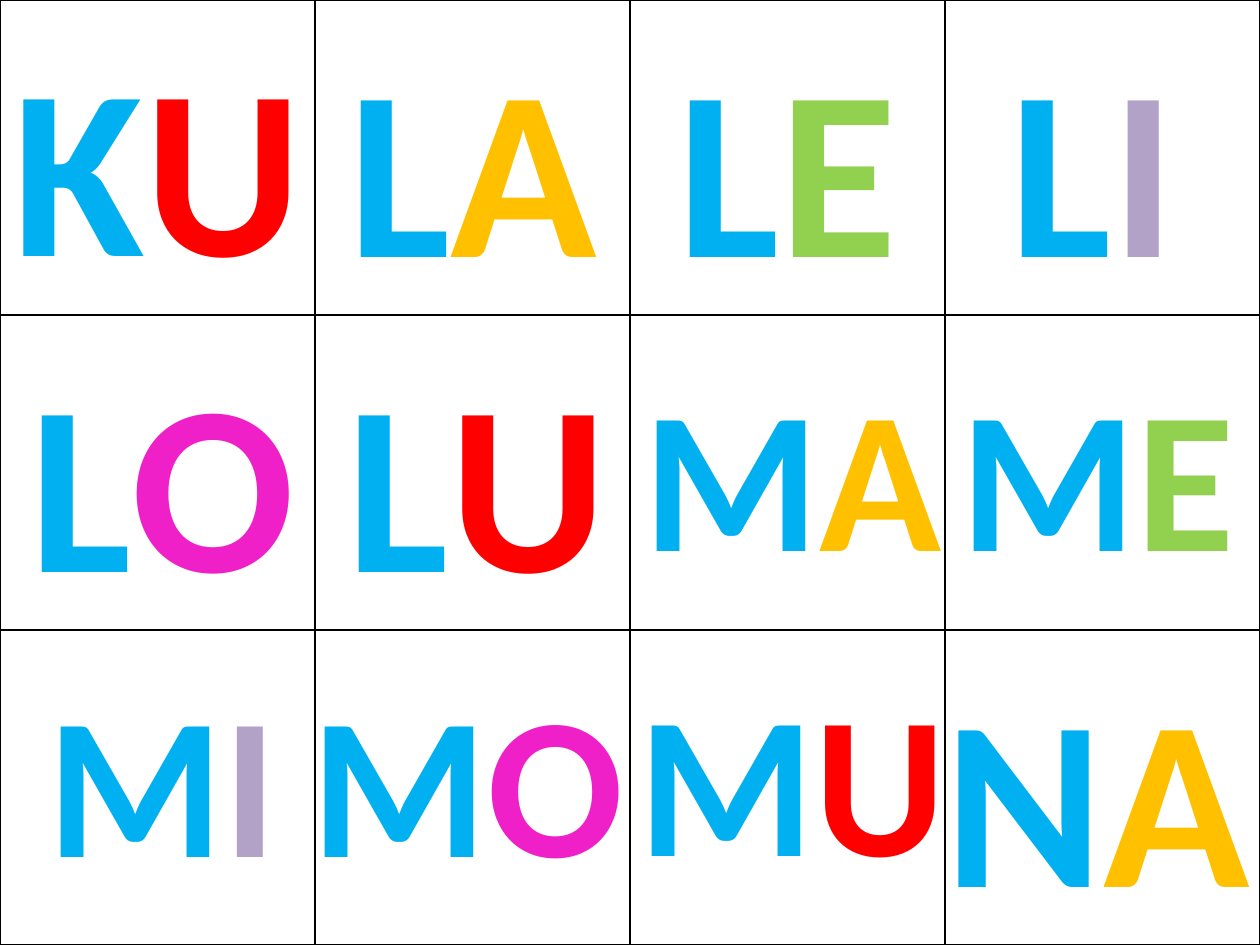
"""Build a sheet of twelve syllable cards with coloured vowels."""
from lxml.etree import SubElement
from pptx import Presentation
from pptx.dml.color import RGBColor
from pptx.enum.text import MSO_AUTO_SIZE, PP_ALIGN
from pptx.oxml import parse_xml
from pptx.oxml.ns import nsdecls, qn
from pptx.util import Inches, Pt


def paint(fill, color):
    fill.solid()
    fill.fore_color.rgb = RGBColor.from_string(color)


def line(tag, color):
    return parse_xml(
        f'<a:{tag} {nsdecls("a")} w="12700"><a:solidFill>'
        f'<a:srgbClr val="{color}"/></a:solidFill></a:{tag}>')


deck = Presentation()
deck.slide_width, deck.slide_height = Inches(10), Inches(7.5)
slide = deck.slides.add_slide(deck.slide_layouts[6])

grid = slide.shapes.add_table(3, 4, 0, 0, Inches(10), Inches(7.5)).table
grid.first_row = grid.horz_banding = False
for cell in grid.iter_cells():
    paint(cell.fill, "FFFFFF")
    props = cell._tc.get_or_add_tcPr()
    for spot, tag in enumerate(("lnL", "lnR", "lnT", "lnB")):
        props.insert(spot, line(tag, "000000"))

blue = "00B0F0"
vowels = {"A": "FFC000", "E": "92D050", "I": "B3A2C7",
          "O": "F020C8", "U": "FF0000"}
sizes = {138: 2.42, 115: 2.04}
cards = [
    ("KU", -0.16, 0.07, 2.81, 138),
    ("LA", 2.42, 0.08, 2.66, 138),
    ("LE", 5, 0.08, 2.5, 138),
    ("LI", 7.34, 0.08, 2.66, 138),
    ("LO", -0.16, 2.58, 2.89, 138),
    ("LU", 2.42, 2.58, 2.73, 138),
    ("NA", 7.34, 5.08, 2.73, 138),
    ("MA", 4.69, 2.73, 3.2, 115),
    ("ME", 7.11, 2.73, 3.2, 115),
    ("MI", -0.31, 5.16, 3.2, 115),
    ("MO", 2.11, 5.16, 3.2, 115),
    ("MU", 4.69, 5.15, 3.2, 115),
]
for word, left, top, width, size in cards:
    box = slide.shapes.add_textbox(
        Inches(left), Inches(top), Inches(width), Inches(sizes[size]))
    frame = box.text_frame
    frame.word_wrap = True
    frame.auto_size = MSO_AUTO_SIZE.SHAPE_TO_FIT_TEXT
    para = frame.paragraphs[0]
    para.alignment = PP_ALIGN.CENTER
    for letter in word:
        run = para.add_run()
        run.text = letter
        font = run.font
        font.name, font.size, font.bold = "Calibri", Pt(size), True
        paint(font.fill, vowels.get(letter, blue))
        run._r.get_or_add_rPr().insert(0, line("ln", "054697"))

deck.save("out.pptx")
